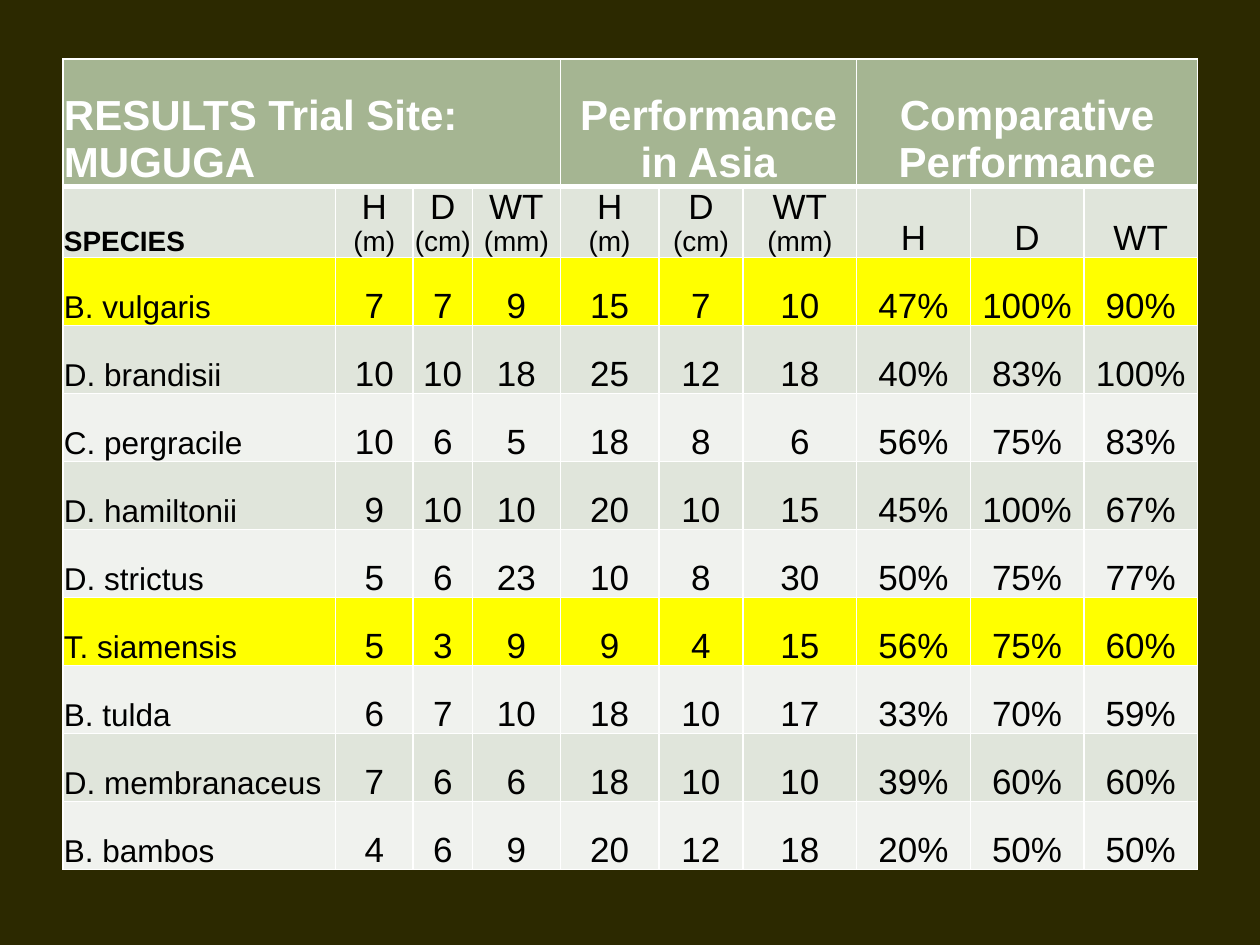
from pptx import Presentation
from pptx.dml.color import RGBColor
from pptx.enum.text import MSO_ANCHOR, PP_ALIGN
from pptx.oxml.ns import qn
from pptx.util import Cm, Pt
from lxml import etree

LEFT, CENTER = PP_ALIGN.LEFT, PP_ALIGN.CENTER
BOTTOM = MSO_ANCHOR.BOTTOM
COLORS = {"bg": "2C2900", "head": "A5B592", "dark": "E0E5DB", "light": "F0F2EE",
          "mark": "FFFF00", "white": "FFFFFF", "black": "000000"}

COL_WIDTHS = [5.49, 1.57, 1.19, 1.78, 1.98, 1.7] + [2.29] * 4
ROW_HEIGHTS = [2.57] + [1.37] * 10
HEADINGS = [(0, 3, ["RESULTS Trial Site: MUGUGA"], LEFT),
            (4, 6, ["Performance", "in Asia"], CENTER),
            (7, 9, ["Comparative", "Performance"], CENTER)]
MEASURES = [["H", "(m)"], ["D", "(cm)"], ["WT", "(mm)"]] * 2 + [["H"], ["D"], ["WT"]]
RESULTS = [
    ("B. vulgaris", 7, 7, 9, 15, 7, 10, "47%", "100%", "90%"),
    ("D. brandisii", 10, 10, 18, 25, 12, 18, "40%", "83%", "100%"),
    ("C. pergracile", 10, 6, 5, 18, 8, 6, "56%", "75%", "83%"),
    ("D. hamiltonii", 9, 10, 10, 20, 10, 15, "45%", "100%", "67%"),
    ("D. strictus", 5, 6, 23, 10, 8, 30, "50%", "75%", "77%"),
    ("T. siamensis", 5, 3, 9, 9, 4, 15, "56%", "75%", "60%"),
    ("B. tulda", 6, 7, 10, 18, 10, 17, "33%", "70%", "59%"),
    ("D. membranaceus", 7, 6, 6, 18, 10, 10, "39%", "60%", "60%"),
    ("B. bambos", 4, 6, 9, 20, 12, 18, "20%", "50%", "50%"),
]
HIGHLIGHTED = {"B. vulgaris", "T. siamensis"}


def write(cell, lines, sizes=(20,), color="black", bold=False, align=CENTER):
    tf = cell.text_frame
    for i, line in enumerate(lines):
        p = tf.paragraphs[0] if i == 0 else tf.add_paragraph()
        p.alignment = align
        r = p.add_run()
        r.text = str(line)
        r.font.name = "Arial"
        r.font.size = Pt(sizes[min(i, len(sizes) - 1)])
        r.font.bold = bold
        r.font.color.rgb = RGBColor.from_string(COLORS[color])


def style_cell(cell, fill, top=1, bottom=1):
    cell.vertical_anchor = BOTTOM
    cell.margin_left = cell.margin_right = cell.margin_top = Cm(0.02)
    cell.margin_bottom = 0
    tcPr = cell._tc.get_or_add_tcPr()
    for side, width in (("L", 1), ("R", 1), ("T", top), ("B", bottom)):
        ln = etree.SubElement(tcPr, qn("a:ln" + side), w=str(Pt(width)))
        solid = etree.SubElement(ln, qn("a:solidFill"))
        etree.SubElement(solid, qn("a:srgbClr"), val=COLORS["white"])
    cell.fill.solid()
    cell.fill.fore_color.rgb = RGBColor.from_string(COLORS[fill])


# Slide and background
prs = Presentation()
prs.slide_width, prs.slide_height = Cm(25.4), Cm(19.05)
s = prs.slides.add_slide(prs.slide_layouts[6])
s.background.fill.solid()
s.background.fill.fore_color.rgb = RGBColor.from_string(COLORS["bg"])

# Table grid
table = s.shapes.add_table(len(ROW_HEIGHTS), len(COL_WIDTHS), Cm(1.27), Cm(1.19),
                           Cm(sum(COL_WIDTHS)), Cm(sum(ROW_HEIGHTS))).table
for column, width in zip(table.columns, COL_WIDTHS):
    column.width = Cm(width)
for row, height in zip(table.rows, ROW_HEIGHTS):
    row.height = Cm(height)

# Group headings
for cell in table.rows[0].cells:
    style_cell(cell, "head", bottom=3)
for first, last, lines, align in HEADINGS:
    table.cell(0, first).merge(table.cell(0, last))
    write(table.cell(0, first), lines, sizes=(24,), color="white", bold=True, align=align)

# Column headings
for cell in table.rows[1].cells:
    style_cell(cell, "dark", top=3)
write(table.cell(1, 0), ["SPECIES"], sizes=(16,), bold=True, align=LEFT)
for col, lines in enumerate(MEASURES, start=1):
    write(table.cell(1, col), lines, sizes=(20, 16))

# Species rows, banded with highlights
for i, values in enumerate(RESULTS):
    fill = "mark" if values[0] in HIGHLIGHTED else ("light", "dark")[i % 2]
    for col, value in enumerate(values):
        cell = table.cell(i + 2, col)
        style_cell(cell, fill)
        if col == 0:
            write(cell, [value], sizes=(18,), align=LEFT)
        else:
            write(cell, [value])

prs.save("out.pptx")
